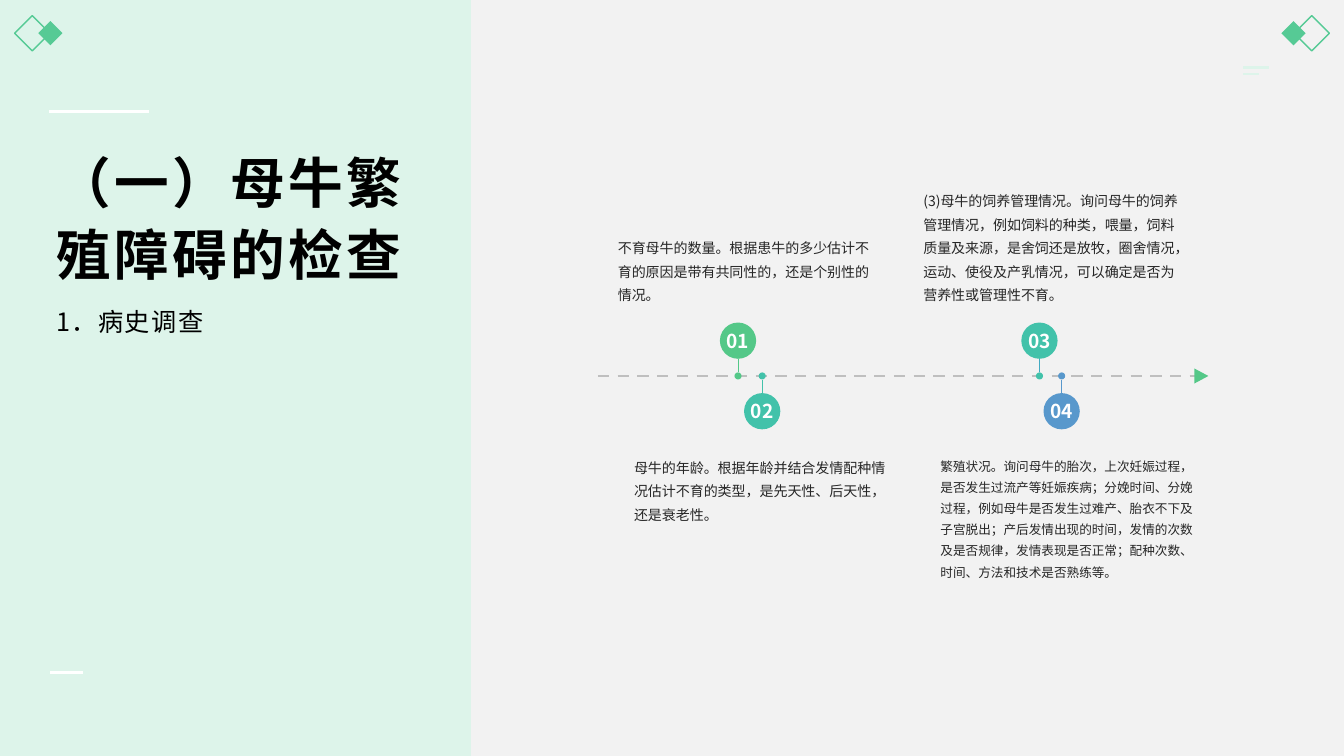
from dataclasses import dataclass

from lxml import etree
from pptx import Presentation
from pptx.dml.color import RGBColor
from pptx.enum.dml import MSO_LINE_DASH_STYLE as Dash
from pptx.enum.shapes import MSO_CONNECTOR, MSO_SHAPE
from pptx.enum.text import MSO_ANCHOR, MSO_AUTO_SIZE, PP_ALIGN
from pptx.oxml.ns import qn
from pptx.util import Inches, Pt


@dataclass(frozen=True)
class Theme:
    font: str = "Noto Sans CJK SC"
    background: str = "F2F2F2"
    panel: str = "DDF4EA"
    ornament: str = "56CA95"
    white: str = "FFFFFF"
    black: str = "000000"
    body: str = "262626"
    axis: str = "BFBFBF"
    green: str = "54C888"
    teal: str = "42C2AA"
    cyan: str = "42AAC2"
    blue: str = "5898CC"
    title_size: float = 39
    subtitle_size: float = 18
    number_size: float = 13.7
    body_size: float = 10
    small_size: float = 9


@dataclass(frozen=True)
class Milestone:
    number: str
    center: float
    color: str
    stem_color: str
    text_left: float
    text_size: float
    text: str


SLIDE_WIDTH, SLIDE_HEIGHT = 13.33, 7.5
AXIS_Y = 3.73
BADGE_OFFSET = 0.35
BADGE_SIZE = 0.36
DOT_SIZE = 0.07
TIGHT_INSETS = (0.07, 0.03)
THEME = Theme()

MILESTONES = [
    Milestone("01", 7.32, THEME.green, THEME.green, 6.03, THEME.body_size,
              "不育母牛的数量。根据患牛的多少估计不育的原因是带有共同性的，还是个别性的情况。"),
    Milestone("02", 7.56, THEME.teal, THEME.teal, 6.19, THEME.body_size,
              "母牛的年龄。根据年龄并结合发情配种情况估计不育的类型，是先天性、后天性，还是衰老性。"),
    Milestone("03", 10.31, THEME.teal, THEME.cyan, 9.06, THEME.body_size,
              "(3)母牛的饲养管理情况。询问母牛的饲养管理情况，例如饲料的种类，喂量，饲料质量及来源，"
              "是舍饲还是放牧，圈舍情况，运动、使役及产乳情况，可以确定是否为营养性或管理性不育。"),
    Milestone("04", 10.53, THEME.blue, THEME.blue, 9.23, THEME.small_size,
              "繁殖状况。询问母牛的胎次，上次妊娠过程，是否发生过流产等妊娠疾病；分娩时间、分娩过程，"
              "例如母牛是否发生过难产、胎衣不下及子宫脱出；产后发情出现的时间，发情的次数及是否规律，"
              "发情表现是否正常；配种次数、时间、方法和技术是否熟练等。"),
]


class SlideBuilder:
    def __init__(self, slide, theme):
        self.slide = slide
        self.theme = theme
        slide.background.fill.solid()
        slide.background.fill.fore_color.rgb = RGBColor.from_string(theme.background)

    def shape(self, kind, left, top, width, height, fill=None, line=None):
        shape = self.slide.shapes.add_shape(
            kind, Inches(left), Inches(top), Inches(width), Inches(height))
        shape.shadow.inherit = False
        if fill:
            shape.fill.solid()
            shape.fill.fore_color.rgb = RGBColor.from_string(fill)
        else:
            shape.fill.background()
        if line:
            shape.line.color.rgb = RGBColor.from_string(line)
            shape.line.width = Pt(1)
        else:
            shape.line.fill.background()
        return shape

    def centered(self, kind, x, y, size, fill=None, line=None):
        return self.shape(kind, x - size / 2, y - size / 2, size, size, fill, line)

    def line(self, start, end, color, width, dash=None):
        connector = self.slide.shapes.add_connector(
            MSO_CONNECTOR.STRAIGHT, *map(Inches, start + end))
        connector.line.color.rgb = RGBColor.from_string(color)
        connector.line.width = Pt(width)
        if dash:
            connector.line.dash_style = dash
        etree.SubElement(connector._element.spPr, qn("a:effectLst"))

    def set_text(self, shape, text, size, color, bold=False, anchor=MSO_ANCHOR.TOP,
                 align=PP_ALIGN.LEFT, line_spacing=1.0, spacing=0, insets=(0.1, 0.05)):
        frame = shape.text_frame
        frame.text = text
        frame.word_wrap = True
        frame.auto_size = MSO_AUTO_SIZE.NONE
        frame.vertical_anchor = anchor
        frame.margin_left = frame.margin_right = Inches(insets[0])
        frame.margin_top = frame.margin_bottom = Inches(insets[1])
        paragraph = frame.paragraphs[0]
        paragraph.alignment = align
        paragraph.line_spacing = line_spacing
        font = paragraph.runs[0].font
        font.size = Pt(size)
        font.bold = bold
        font.color.rgb = RGBColor.from_string(color)
        font.name = self.theme.font
        properties = paragraph.runs[0]._r.get_or_add_rPr()
        etree.SubElement(properties, qn("a:ea")).set("typeface", self.theme.font)
        if spacing:
            properties.set("spc", str(round(spacing * 100)))

    def text(self, left, top, width, height, text, size, color, **style):
        box = self.slide.shapes.add_textbox(
            Inches(left), Inches(top), Inches(width), Inches(height))
        self.set_text(box, text, size, color, **style)

    def title(self, left, top, width, height, text):
        title = self.slide.shapes.title
        title.left, title.top = Inches(left), Inches(top)
        title.width, title.height = Inches(width), Inches(height)
        self.slide.shapes._spTree.append(title._element)
        self.set_text(title, text, self.theme.title_size, self.theme.black, bold=True,
                      anchor=MSO_ANCHOR.BOTTOM, line_spacing=1.1, spacing=2.4,
                      insets=TIGHT_INSETS)

    def ornament(self, solid_x, outline_x):
        color = self.theme.ornament
        self.centered(MSO_SHAPE.DIAMOND, solid_x, 0.33, 0.24, fill=color)
        self.centered(MSO_SHAPE.DIAMOND, outline_x, 0.33, 0.35, line=color)

    def milestone(self, item, above):
        side = -1 if above else 1
        badge_y = AXIS_Y + side * BADGE_OFFSET
        badge = self.centered(MSO_SHAPE.OVAL, item.center, badge_y, BADGE_SIZE, item.color)
        self.set_text(badge, item.number, self.theme.number_size, self.theme.white, bold=True,
                      anchor=MSO_ANCHOR.MIDDLE, align=PP_ALIGN.CENTER, insets=(0, 0))
        self.line((item.center, AXIS_Y + side * DOT_SIZE / 2),
                  (item.center, badge_y - side * BADGE_SIZE / 2), item.stem_color, 0.5)
        self.centered(MSO_SHAPE.OVAL, item.center, AXIS_Y, DOT_SIZE, item.color)
        self.text(item.text_left, 1.52 if above else 4.44, 2.76, 1.54, item.text,
                  item.text_size, self.theme.body, line_spacing=1.4,
                  anchor=MSO_ANCHOR.BOTTOM if above else MSO_ANCHOR.TOP)


def main():
    presentation = Presentation()
    presentation.slide_width = Inches(SLIDE_WIDTH)
    presentation.slide_height = Inches(SLIDE_HEIGHT)
    slide = presentation.slides.add_slide(presentation.slide_layouts[5])
    builder = SlideBuilder(slide, THEME)

    builder.shape(MSO_SHAPE.RECTANGLE, 0, 0, 4.67, SLIDE_HEIGHT, THEME.panel)
    builder.ornament(SLIDE_WIDTH - 0.5, SLIDE_WIDTH - 0.32)
    builder.ornament(0.5, 0.32)
    for left, right, y, color, width in [
        (0.49, 1.48, 1.11, THEME.white, 2),
        (0.5, 0.82, 6.67, THEME.white, 2),
        (12.33, 12.59, 0.67, THEME.panel, 1.5),
        (12.33, 12.49, 0.73, THEME.panel, 1.5),
    ]:
        builder.line((left, y), (right, y), color, width)

    builder.title(0.49, 1.33, 3.67, 1.54, "（一）母牛繁殖障碍的检查")
    builder.text(0.49, 2.95, 3.67, 0.55, "1．病史调查", THEME.subtitle_size, THEME.black,
                 line_spacing=1.2, spacing=1, insets=TIGHT_INSETS)

    builder.line((5.93, AXIS_Y), (11.85, AXIS_Y), THEME.axis, 2, Dash.DASH)
    for index, item in enumerate(MILESTONES):
        builder.milestone(item, above=index % 2 == 0)
    arrow = builder.shape(MSO_SHAPE.ISOSCELES_TRIANGLE, 11.84, 3.66, 0.15, 0.14, THEME.green)
    arrow.rotation = 90

    presentation.save("out.pptx")


if __name__ == "__main__":
    main()
